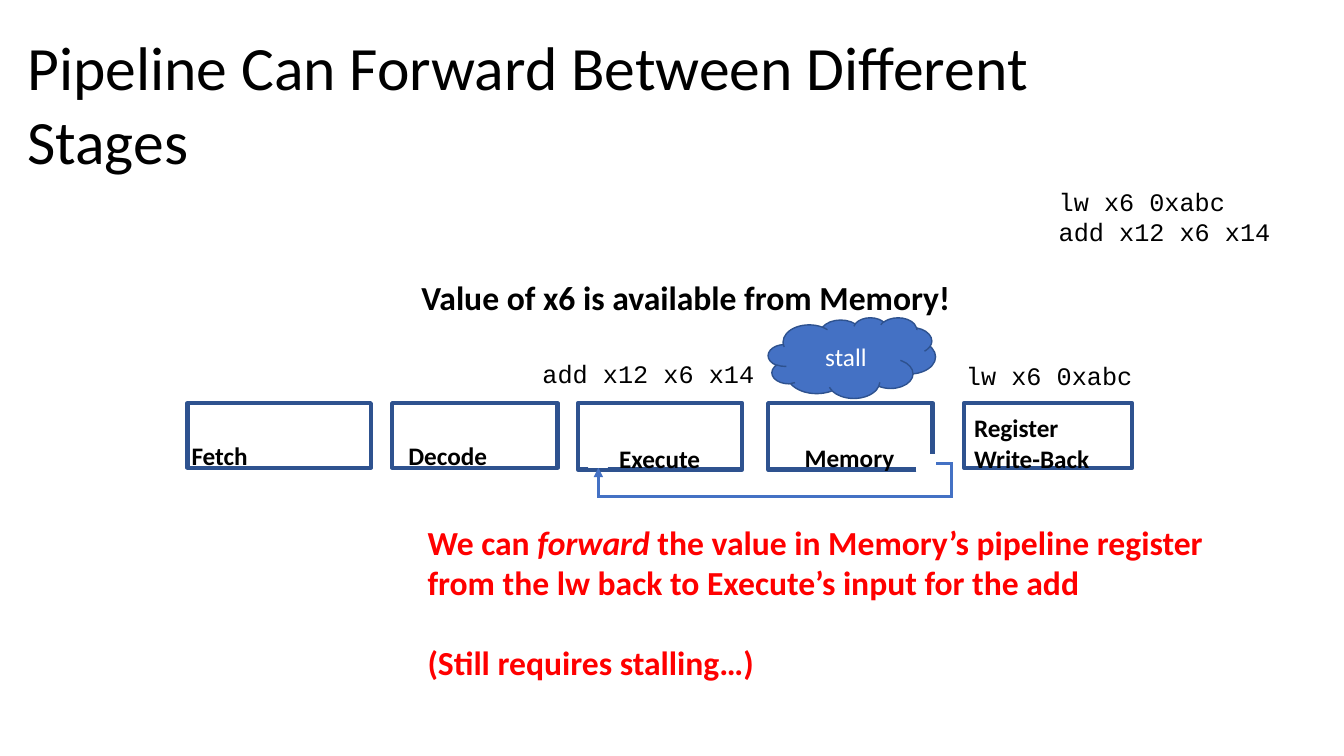
from dataclasses import dataclass

import lxml.etree
import pptx
import pptx.dml.color
import pptx.enum.shapes
import pptx.enum.text
import pptx.oxml.ns
import pptx.util

SLIDE_WIDTH = pptx.util.Inches(13.33)
SLIDE_HEIGHT = pptx.util.Inches(7.5)
GRID = 100  # columns across and rows down the slide

COLORS = {
    "ink": "000000",
    "paper": "FFFFFF",
    "alert": "FF0000",
    "accent": "4471C4",
    "outline": "2E528F",
}
SANS = "Calibri"
MONO = "Courier New"


@dataclass(frozen=True)
class Area:
    """A rectangle in grid columns and rows."""
    column: float
    row: float
    columns: float
    rows: float


@dataclass(frozen=True)
class Note:
    """A text box; each paragraph is a list of (text, italic) runs."""
    area: Area
    paragraphs: list[list[tuple[str, bool]]]
    size: float = 18
    font: str = SANS
    color: str = "ink"
    bold: bool = False
    last_gap: float = 0  # points before the last paragraph


@dataclass(frozen=True)
class Stage:
    name: str
    box: Area
    label_column: float
    label_row: float


STAGE_ROW = 53.33
STAGES = [
    Stage("Fetch", Area(13.95, STAGE_ROW, 13.65, 8.53), 14.25, 58.2),
    Stage("Decode", Area(29.18, STAGE_ROW, 12.3, 8.53), 30.38, 58.2),
    Stage("Execute", Area(42.99, STAGE_ROW, 12.23, 8.8), 46.06, 58.67),
    Stage("Memory", Area(57.16, STAGE_ROW, 12.23, 8.8), 59.86, 58.53),
    Stage("Register Write-Back", Area(71.72, STAGE_ROW, 12.53, 8.53), 72.47, 54.59),
]
LABEL_COLUMNS, LABEL_ROWS = 8.9, 4.4

NOTES = [
    Note(Area(78.77, 24.59, 17, 8), [[("lw x6 0xabc", False)], [("add x12 x6 x14", False)]], font=MONO),
    Note(Area(40.36, 47.39, 17, 4.4), [[("add x12 x6 x14", False)]], font=MONO),
    Note(Area(71.87, 47.65, 14, 4.4), [[("lw x6 0xabc", False)]], font=MONO),
    Note(Area(31.36, 36.67, 45, 5.5), [[("Value of x6 is available from Memory!", False)]], size=24, bold=True),
    Note(
        Area(31.81, 68.99, 60, 22),
        [
            [("We can ", False), ("forward ", True), ("the value in Memory’s pipeline register", False)],
            [("from the lw back to Execute’s input for the add", False)],
            [("(Still requires stalling…)", False)],
        ],
        size=24, color="alert", bold=True, last_gap=28.7,
    ),
]

TITLE_AREA = Area(2.03, 3.8, 86.65, 20)
STALL_CLOUD = Area(57.16, 42, 12.45, 10.67)
FORWARD_ROUTE = [(69.54, 61.27), (70.78, 61.27), (70.78, 65.67), (44.52, 65.67), (44.52, 61.87)]
REGISTER_GAPS = [Area(68.19, 60.13, 1.39, 2.27), Area(43.81, 59.73, 1.39, 2.13)]


def x(columns: float) -> int:
    return round(SLIDE_WIDTH * columns / GRID)


def y(rows: float) -> int:
    return round(SLIDE_HEIGHT * rows / GRID)


def bounds(area: Area) -> tuple[int, int, int, int]:
    return x(area.column), y(area.row), x(area.columns), y(area.rows)


def rgb(name: str) -> pptx.dml.color.RGBColor:
    return pptx.dml.color.RGBColor.from_string(COLORS[name])


def prepare_frame(frame, wrap: bool = True) -> None:
    frame.word_wrap = wrap
    frame.auto_size = pptx.enum.text.MSO_AUTO_SIZE.NONE
    frame.vertical_anchor = pptx.enum.text.MSO_ANCHOR.TOP
    frame.margin_left = frame.margin_right = frame.margin_top = frame.margin_bottom = 0


def set_font(paragraph, size: float, font: str = SANS, color: str = "ink", bold: bool = False) -> None:
    paragraph.font.size = pptx.util.Pt(size)
    paragraph.font.name = font
    paragraph.font.color.rgb = rgb(color)
    paragraph.font.bold = bold


def paint(shape, fill: str | None, line: str, width: float) -> None:
    shape.shadow.inherit = False
    if fill is None:
        shape.fill.background()
    else:
        shape.fill.solid()
        shape.fill.fore_color.rgb = rgb(fill)
    shape.line.color.rgb = rgb(line)
    shape.line.width = pptx.util.Pt(width)


def add_preset(slide, kind, area: Area, fill: str | None, line: str, width: float):
    shape = slide.shapes.add_shape(kind, *bounds(area))
    paint(shape, fill, line, width)
    return shape


def add_note(slide, note: Note) -> None:
    frame = slide.shapes.add_textbox(*bounds(note.area)).text_frame
    prepare_frame(frame)
    for index, runs in enumerate(note.paragraphs):
        paragraph = frame.add_paragraph() if index else frame.paragraphs[0]
        set_font(paragraph, note.size, note.font, note.color, note.bold)
        for text, italic in runs:
            run = paragraph.add_run()
            run.text = text
            if italic:
                run.font.italic = True
    if note.last_gap:
        frame.paragraphs[-1].space_before = pptx.util.Pt(note.last_gap)


def add_stage(slide, stage: Stage) -> None:
    add_preset(slide, pptx.enum.shapes.MSO_SHAPE.RECTANGLE, stage.box, None, "outline", 3)
    area = Area(stage.label_column, stage.label_row, LABEL_COLUMNS, LABEL_ROWS)
    add_note(slide, Note(area, [[(stage.name, False)]], bold=True))


def add_title(slide, text: str) -> None:
    title = slide.shapes.title
    title.left, title.top, title.width, title.height = bounds(TITLE_AREA)
    title.text_frame.text = text
    prepare_frame(title.text_frame)
    paragraph = title.text_frame.paragraphs[0]
    paragraph.alignment = pptx.enum.text.PP_ALIGN.LEFT
    set_font(paragraph, 44)


def add_stall_cloud(slide) -> None:
    cloud = add_preset(slide, pptx.enum.shapes.MSO_SHAPE.CLOUD, STALL_CLOUD, "accent", "outline", 1)
    frame = cloud.text_frame
    frame.text = "stall"
    prepare_frame(frame)
    frame.vertical_anchor = pptx.enum.text.MSO_ANCHOR.MIDDLE
    frame.paragraphs[0].alignment = pptx.enum.text.PP_ALIGN.CENTER
    set_font(frame.paragraphs[0], 18, color="paper")


def add_forward_arrow(slide) -> None:
    start, *corners = [(x(column), y(row)) for column, row in FORWARD_ROUTE]
    builder = slide.shapes.build_freeform(*start, scale=1.0)
    builder.add_line_segments(corners, close=False)
    arrow = builder.convert_to_shape()
    paint(arrow, None, "accent", 2.25)
    line = arrow.line._get_or_add_ln()
    lxml.etree.SubElement(line, pptx.oxml.ns.qn("a:miter"), lim="800000")
    lxml.etree.SubElement(line, pptx.oxml.ns.qn("a:tailEnd"), type="triangle")


def main() -> None:
    presentation = pptx.Presentation()
    presentation.slide_width = SLIDE_WIDTH
    presentation.slide_height = SLIDE_HEIGHT
    slide = presentation.slides.add_slide(presentation.slide_layouts.get_by_name("Title Only"))
    add_title(slide, "Pipeline Can Forward Between Different Stages")
    for stage in STAGES:
        add_stage(slide, stage)
    add_stall_cloud(slide)
    add_forward_arrow(slide)
    for note in NOTES:
        add_note(slide, note)
    for gap in REGISTER_GAPS:
        add_preset(slide, pptx.enum.shapes.MSO_SHAPE.RECTANGLE, gap, "paper", "paper", 1)
    presentation.save("out.pptx")


if __name__ == "__main__":
    main()
